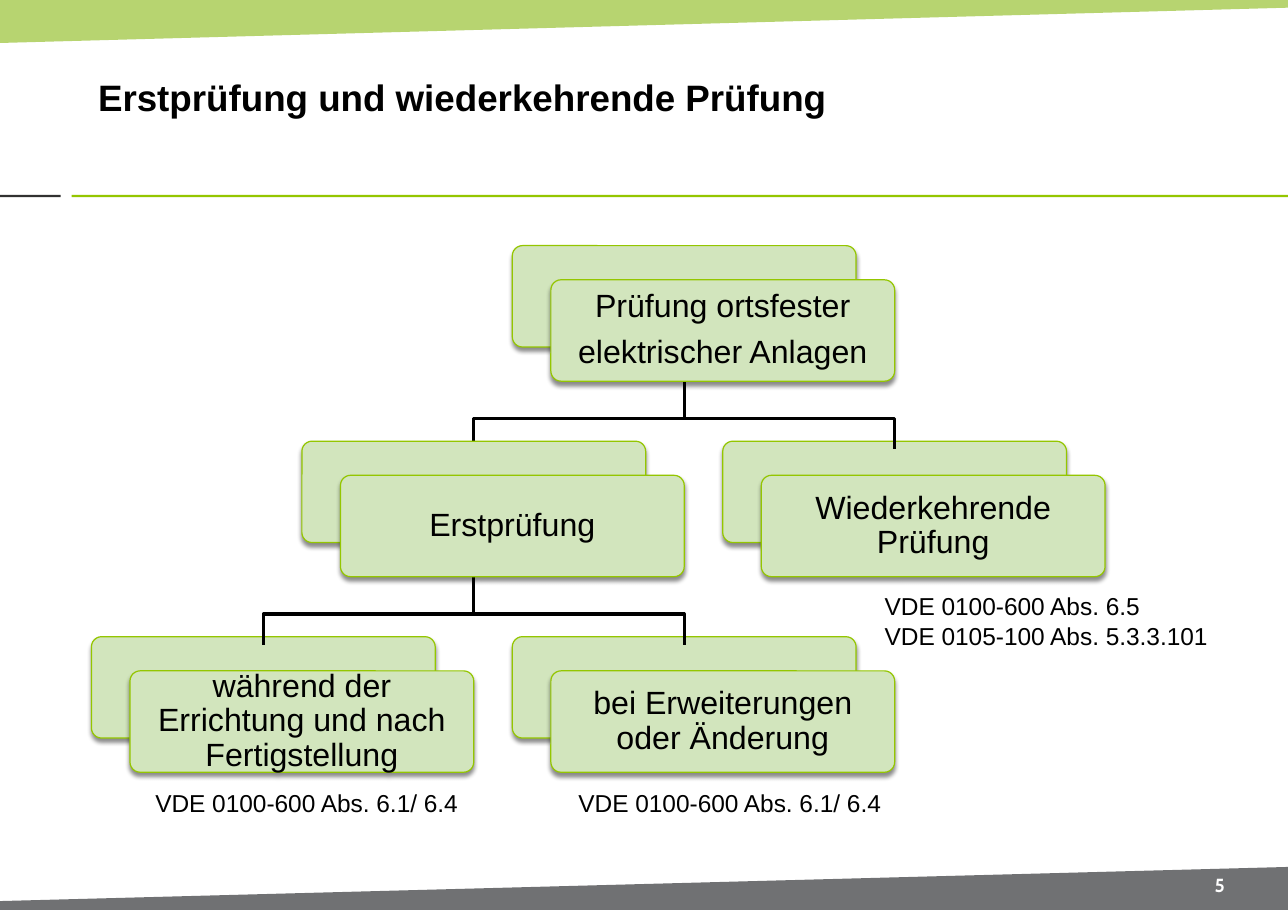
"""Build a slide with a tree of initial and recurring electrical inspections."""
from lxml import etree
from pptx import Presentation, util as u
from pptx.dml.color import RGBColor
from pptx.enum import shapes, text
from pptx.oxml import ns

INCH = u.Inches
LEFT, CENTER = text.PP_ALIGN.LEFT, text.PP_ALIGN.CENTER
TOP, MIDDLE = text.MSO_ANCHOR.TOP, text.MSO_ANCHOR.MIDDLE


def paint(shape, fill=None, line=None, width=0):
    shape.shadow.inherit = False
    for part, color in ((shape.fill, fill), (shape.line.fill, line)):
        if color:
            part.solid()
            part.fore_color.rgb = RGBColor.from_string(color)
        else:
            part.background()
    if line:
        shape.line.width = u.Pt(width)


def write(shape, lines, size, align=LEFT, anchor=TOP, insets=(0.11, 0.06),
          color="000000", font="Arial", bold=False, spacing=None):
    frame = shape.text_frame
    side, edge = map(INCH, insets)
    frame_format = {"word_wrap": True, "auto_size": text.MSO_AUTO_SIZE.NONE,
                    "vertical_anchor": anchor, "margin_left": side, "margin_right": side,
                    "margin_top": edge, "margin_bottom": edge}
    for name, value in frame_format.items():
        setattr(frame, name, value)
    for index, line in enumerate(lines):
        para = frame.paragraphs[0] if index == 0 else frame.add_paragraph()
        para.alignment = align
        for name, value in (spacing or {}).items():
            setattr(para, name, value)
        span = para.add_run()
        span.text = line
        for name, value in {"size": u.Pt(size), "name": font, "bold": bold}.items():
            setattr(span.font, name, value)
        span.font.color.rgb = RGBColor.from_string(color)


deck = Presentation()
deck.slide_width, deck.slide_height = INCH(11.69), INCH(8.27)
page = deck.slides.add_slide(deck.slide_layouts[5])

bands = [
    ("95C02A", 67, [(0, 0), (11.69, 0), (11.69, 0.07), (0, 0.39)]),
    ("707173", 100, [(0, 8.26), (0, 8.18), (11.69, 7.87), (11.69, 8.26)]),
]
for color, opacity, corners in bands:
    points = [(INCH(x), INCH(y)) for x, y in corners]
    builder = page.shapes.build_freeform(*points[0])
    builder.add_line_segments(points[1:], close=True)
    band = builder.convert_to_shape()
    paint(band, color)
    if opacity < 100:
        tint = band.fill._xPr.find(".//" + ns.qn("a:srgbClr"))
        etree.SubElement(tint, ns.qn("a:alpha"), val=str(opacity * 1000))

for left, width, color in [(0, 0.55, "313130"), (0.65, 11.04, "94C600")]:
    rule = page.shapes.add_shape(shapes.MSO_SHAPE.RECTANGLE, INCH(left), INCH(1.77),
                                 INCH(width), INCH(0.02))
    paint(rule, color)

title = page.shapes.title
for name, value in {"left": 0.78, "top": 0.28, "width": 10.43, "height": 1.19}.items():
    setattr(title, name, INCH(value))
write(title, ["Erstprüfung und wiederkehrende Prüfung"], 24, anchor=MIDDLE, bold=True)

number = page.shapes.add_textbox(INCH(10.73), INCH(7.89), INCH(0.68), INCH(0.29))
write(number, ["5"], 12.4, CENTER, MIDDLE, color="FFFFFF", font="Cabin", bold=True)

COLUMN, ROW = 1.91, 1.775
CARD_WIDTH, CARD_HEIGHT = 3.12, 0.92
cards = [
    (0, 2, ["während der Errichtung und nach Fertigstellung"], False),
    (2, 2, ["bei Erweiterungen oder Änderung"], False),
    (3, 1, ["Wiederkehrende Prüfung"], False),
    (2, 0, ["Prüfung ortsfester", "elektrischer Anlagen"], True),
    (1, 1, ["Erstprüfung"], True),
]
for column, row, lines, has_children in cards:
    left, top = 0.83 + column * COLUMN, 2.23 + row * ROW
    if has_children:
        stem = left + CARD_WIDTH / 2
        for child in (stem + COLUMN, stem - COLUMN):
            builder = page.shapes.build_freeform(INCH(stem), INCH(top + 0.99))
            builder.add_line_segments(
                [(INCH(x), INCH(top + y))
                 for x, y in ((stem, 1.57), (child, 1.57), (child, 1.85))], close=False)
            paint(builder.convert_to_shape(), line="000000", width=2)
    for shift_x, shift_y in ((0, 0), (0.35, 0.31)):
        card = page.shapes.add_shape(
            shapes.MSO_SHAPE.ROUNDED_RECTANGLE, INCH(left + shift_x), INCH(top + shift_y),
            INCH(CARD_WIDTH), INCH(CARD_HEIGHT))
        card.adjustments[0] = 0.1
        paint(card, "D2E5BD", "94C600", 0.79)
        effects = card._element.spPr.find(ns.qn("a:effectLst"))
        shadow = etree.SubElement(effects, ns.qn("a:outerShdw"), blurRad=str(u.Pt(3)),
                                  dist=str(u.Pt(2.4)), dir="5400000", rotWithShape="0")
        shade = etree.SubElement(shadow, ns.qn("a:srgbClr"), val="000000")
        etree.SubElement(shade, ns.qn("a:alpha"), val="45000")
    write(card, lines, 21, CENTER, MIDDLE, insets=(0.07, 0.07),
          spacing={"line_spacing": 0.9, "space_after": u.Pt(7.35)})

references = [
    (1.3, 7.09, 0.38, ["VDE 0100-600 Abs. 6.1/ 6.4"]),
    (5.14, 7.09, 0.38, ["VDE 0100-600 Abs. 6.1/ 6.4"]),
    (7.92, 5.31, 0.65, ["VDE 0100-600 Abs. 6.5", "VDE 0105-100 Abs. 5.3.3.101"]),
]
for left, top, height, lines in references:
    box = page.shapes.add_textbox(INCH(left), INCH(top), INCH(3.64), INCH(height))
    write(box, lines, 16)

deck.save("out.pptx")
